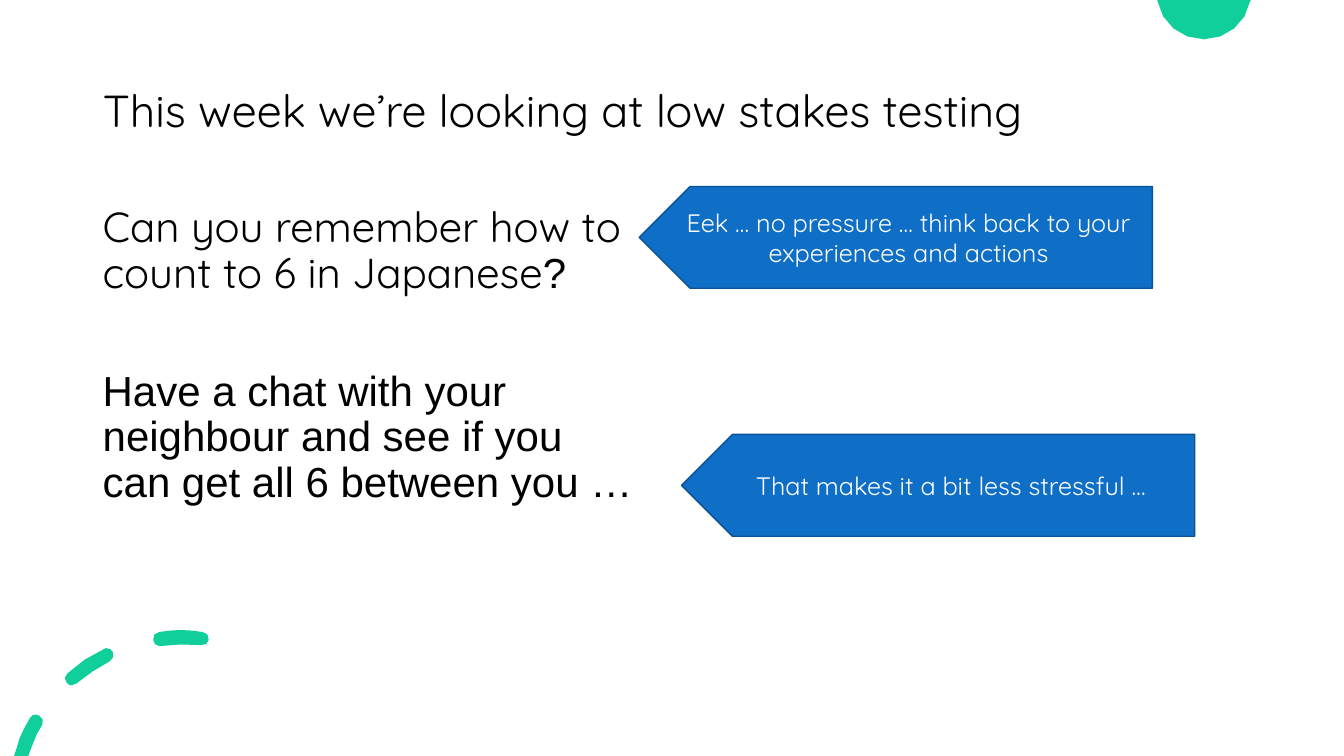
from pptx import Presentation
from pptx.dml.color import RGBColor
from pptx.enum.shapes import MSO_SHAPE
from pptx.enum.text import MSO_ANCHOR, MSO_AUTO_SIZE, PP_ALIGN
from pptx.util import Inches, Pt

PENTAGON = MSO_SHAPE.PENTAGON
MIDDLE, TOP = MSO_ANCHOR.MIDDLE, MSO_ANCHOR.TOP
LEFT, CENTER = PP_ALIGN.LEFT, PP_ALIGN.CENTER
NO_FIT = MSO_AUTO_SIZE.NONE

# Content
GREEN, BLUE, DARK_BLUE = "10CF9B", "0F6FC6", "0B5292"
BLACK, WHITE = "000000", "FFFFFF"
HEAD_FONT, PLAIN_FONT = "Quicksand", "Arial"

TITLE = "This week we’re looking at low stakes testing"
# Paragraphs: space before in points, then (text, font) runs
BODY = [
    (10, [("Can you remember how to count to 6 in Japanese", HEAD_FONT),
          ("?", PLAIN_FONT)]),
    (52, [("Have a chat with your neighbour and see if you can get all 6 "
           "between you …", PLAIN_FONT)]),
]
CALLOUTS = [
    (6.34, 1.85, "Eek … no pressure … think back to your experiences and actions"),
    (6.76, 4.31, "That makes it a bit less stressful …"),
]
CALLOUT_W, CALLOUT_H = 5.09, 1.01

# Outlines in inches: a pair is a corner, six numbers are a Bézier curve
TOP_DISC = [
    [(11.48, 0), (12.41, 0), (12.4, 0.01),
     (12.36, 0.23, 12.17, 0.39, 11.94, 0.39),
     (11.71, 0.39, 11.52, 0.23, 11.48, 0.01)],
]
DASHED_ARC = [
    [(0.36, 7.09), (0.34, 7.08, 0.31, 7.1, 0.3, 7.12),
     (0.26, 7.18, 0.23, 7.25, 0.2, 7.31), (0.14, 7.5), (0.28, 7.5),
     (0.33, 7.37), (0.35, 7.31, 0.38, 7.25, 0.42, 7.19),
     (0.44, 7.16, 0.42, 7.11, 0.39, 7.1)],
    [(1.05, 6.43), (1.03, 6.44), (0.9, 6.5, 0.77, 6.58, 0.67, 6.68),
     (0.64, 6.7, 0.63, 6.75, 0.66, 6.77), (0.67, 6.79, 0.69, 6.8, 0.71, 6.8),
     (0.76, 6.78), (0.86, 6.7, 0.97, 6.62, 1.09, 6.56),
     (1.12, 6.54, 1.14, 6.5, 1.12, 6.47), (1.11, 6.44, 1.08, 6.43, 1.05, 6.43)],
    [(1.79, 6.25), (1.72, 6.25, 1.65, 6.26, 1.58, 6.27),
     (1.54, 6.27, 1.51, 6.31, 1.52, 6.35), (1.52, 6.38, 1.55, 6.41, 1.58, 6.41),
     (1.73, 6.39, 1.86, 6.39, 1.99, 6.4), (2.03, 6.41, 2.07, 6.38, 2.07, 6.35),
     (2.08, 6.31, 2.05, 6.27, 2.01, 6.27), (1.94, 6.26, 1.86, 6.25, 1.79, 6.25)],
]
# Each decoration with the number of lines per curve
DECORATIONS = [(TOP_DISC, 4), (DASHED_ARC, 2)]


def color(hex_text):
    return RGBColor.from_string(hex_text)


def format_run(r, size, font, hex_text):
    r.font.size, r.font.name = Pt(size), font
    r.font.color.rgb = color(hex_text)


def flatten(outline, steps):
    """Return the outline as points, with each curve cut into short lines."""
    points = [outline[0]]
    for part in outline[1:]:
        if len(part) == 2:
            points.append(part)
            continue
        x0, y0 = points[-1]
        x1, y1, x2, y2, x3, y3 = part
        for i in range(1, steps + 1):
            t = i / steps
            u = 1 - t
            a, b, c, d = u**3, 3 * u * u * t, 3 * u * t * t, t**3
            points.append((a * x0 + b * x1 + c * x2 + d * x3,
                           a * y0 + b * y1 + c * y2 + d * y3))
    return [(Inches(x), Inches(y)) for x, y in points]


def add_decoration(s, outlines, steps):
    first, *others = [flatten(outline, steps) for outline in outlines]
    builder = s.shapes.build_freeform(*first[0])
    builder.add_line_segments(first[1:], close=True)
    for points in others:
        builder.move_to(*points[0])
        builder.add_line_segments(points[1:], close=True)
    sp = builder.convert_to_shape()
    sp.shadow.inherit = False
    sp.fill.solid()
    sp.fill.fore_color.rgb = color(GREEN)
    sp.line.fill.background()


def add_callout(s, x, y, text):
    sp = s.shapes.add_shape(PENTAGON, Inches(x), Inches(y),
                            Inches(CALLOUT_W), Inches(CALLOUT_H))
    sp._element.spPr.xfrm.set("flipH", "1")  # point to the left
    sp.shadow.inherit = False
    sp.fill.solid()
    sp.fill.fore_color.rgb = color(BLUE)
    sp.line.color.rgb = color(DARK_BLUE)
    sp.line.width = Pt(1)
    tf = sp.text_frame
    tf.word_wrap, tf.vertical_anchor = True, MIDDLE
    tf.text = text
    p = tf.paragraphs[0]
    p.alignment = CENTER
    format_run(p.runs[0], 18, HEAD_FONT, WHITE)


prs = Presentation()
prs.slide_width, prs.slide_height = Inches(13.33), Inches(7.5)
s = prs.slides.add_slide(prs.slide_layouts[5])

# Green decorations
for outlines, steps in DECORATIONS:
    add_decoration(s, outlines, steps)

# Title
title = s.shapes.title
title.left, title.top = Inches(0.92), Inches(0.4)
title.width, title.height = Inches(11.5), Inches(1.45)
tf = title.text_frame
tf.text = TITLE
tf.word_wrap, tf.auto_size, tf.vertical_anchor = True, NO_FIT, MIDDLE
p = tf.paragraphs[0]
p.alignment, p.line_spacing = LEFT, 0.9
format_run(p.runs[0], 32, HEAD_FONT, BLACK)

# Questions
tf = s.shapes.add_textbox(Inches(0.92), Inches(2), Inches(5.5),
                          Inches(4.22)).text_frame
tf.word_wrap, tf.vertical_anchor = True, TOP
for i, (space, runs) in enumerate(BODY):
    p = tf.add_paragraph() if i else tf.paragraphs[0]
    p.line_spacing, p.space_before = 0.9, Pt(space)
    for text, font in runs:
        r = p.add_run()
        r.text = text
        format_run(r, 30, font, BLACK)

# Callouts
for callout in CALLOUTS:
    add_callout(s, *callout)

prs.save("out.pptx")
